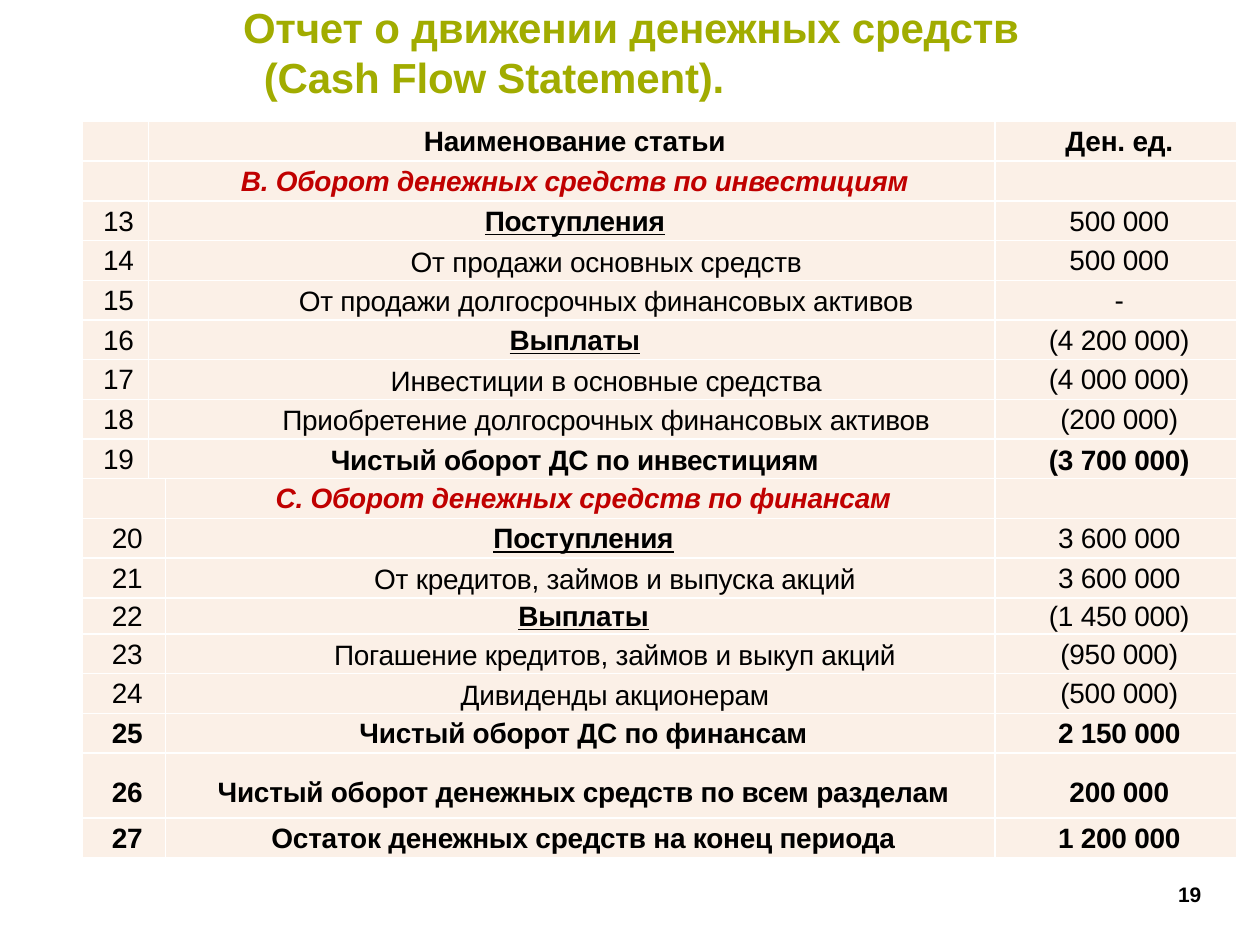
import pptx
import pptx.util
import pptx.dml.color
import pptx.enum.text
import pptx.oxml
import pptx.oxml.ns
from pptx.util import Cm, Pt

COLORS = {"title": "A1AC00", "text": "000000", "section": "C00000",
          "cell": "FBF0E7", "border": "FFFFFF"}
FONT = "Arial"

TITLE = "Отчет о движении денежных средств (Cash Flow Statement)."
PAGE_NUMBER = "19"

# Line number, item, amount, kind of line
INVESTING = [
    ("", "Наименование статьи", "Ден. ед.", "header"),
    ("", "B. Оборот денежных средств по инвестициям", "", "section"),
    ("13", "Поступления", "500 000", "group"),
    ("14", "От продажи основных средств", "500 000", "item"),
    ("15", "От продажи долгосрочных финансовых активов", "-", "item"),
    ("16", "Выплаты", "(4 200 000)", "group"),
    ("17", "Инвестиции в основные средства", "(4 000 000)", "item"),
    ("18", "Приобретение долгосрочных финансовых активов", "(200 000)", "item"),
    ("19", "Чистый оборот ДС по инвестициям", "(3 700 000)", "subtotal"),
]
FINANCING = [
    ("", "C. Оборот денежных средств по финансам", "", "section"),
    ("20", "Поступления", "3 600 000", "group"),
    ("21", "От кредитов, займов и выпуска акций", "3 600 000", "item"),
    ("22", "Выплаты", "(1 450 000)", "group"),
    ("23", "Погашение кредитов, займов и выкуп акций", "(950 000)", "item"),
    ("24", "Дивиденды акционерам", "(500 000)", "item"),
    ("25", "Чистый оборот ДС по финансам", "2 150 000", "total"),
    ("26", "Чистый оборот денежных средств по всем разделам", "200 000", "total"),
    ("27", "Остаток денежных средств на конец периода", "1 200 000", "total"),
]
LINES = INVESTING + FINANCING

COLUMN_WIDTHS = [1.33, 0.35, 16.72, 4.88]
ROW_HEIGHT = 0.8
SPECIAL_HEIGHTS = {"22": 0.73, "26": 1.31}
SPECIAL_INSETS = {"26": 0.3}


def set_font(paragraph, size, color, bold):
    font = paragraph.font
    font.name, font.size, font.bold = FONT, Pt(size), bold
    font.color.rgb = pptx.dml.color.RGBColor.from_string(COLORS[color])
    font._rPr.set("spc", "-10")
    return font


def set_indent(paragraph, left, first=0):
    properties = paragraph._p.get_or_add_pPr()
    properties.set("marL", str(Cm(left)))
    properties.set("indent", str(Cm(first)))


def add_text(slide, text, box, size, color, left, first=0):
    frame = slide.shapes.add_textbox(*map(Cm, box)).text_frame
    frame.margin_left = frame.margin_right = frame.margin_bottom = 0
    frame.margin_top = 0
    frame.word_wrap = True
    paragraph = frame.paragraphs[0]
    paragraph.text = text
    set_indent(paragraph, left, first)
    set_font(paragraph, size, color, True)


def style_cell(cell):
    for side in ("lnL", "lnR", "lnT", "lnB"):
        cell._tc.get_or_add_tcPr().append(pptx.oxml.parse_xml(
            f'<a:{side} {pptx.oxml.ns.nsdecls("a")} w="{Pt(1)}"><a:solidFill>'
            f'<a:srgbClr val="{COLORS["border"]}"/></a:solidFill></a:{side}>'))
    cell.fill.solid()
    cell.fill.fore_color.rgb = pptx.dml.color.RGBColor.from_string(COLORS["cell"])
    cell.margin_left = cell.margin_right = cell.margin_bottom = 0
    cell.margin_top = Cm(0.03)
    cell.vertical_anchor = pptx.enum.text.MSO_ANCHOR.MIDDLE


def fill_cell(cell, text, part, kind, number):
    is_item = kind == "item" and part == "name"
    paragraph = cell.text_frame.paragraphs[0]
    paragraph.text = text
    paragraph.alignment = pptx.enum.text.PP_ALIGN.CENTER
    set_indent(paragraph, 1.4 if is_item else 0.13)
    bold = (kind in ("header", "total")
            or kind == "subtotal" and part != "number"
            or kind in ("section", "group") and part == "name")
    font = set_font(paragraph, 16, "section" if kind == "section" else "text", bold)
    font.italic = kind == "section"
    font.underline = kind == "group" and part == "name"
    lowered = is_item or kind == "subtotal" and part != "number"
    cell.margin_top = Cm(SPECIAL_INSETS.get(number, 0.08 if lowered else 0.03))


deck = pptx.Presentation()
deck.slide_width, deck.slide_height = Cm(25.4), Cm(19.05)
slide = deck.slides.add_slide(deck.slide_layouts[6])

# Title, with a hanging second line
add_text(slide, TITLE, (4.85, 0.03, 15.88, 2.1), 24, "title", 0.47, -0.42)

# Cash flow table
heights = [SPECIAL_HEIGHTS.get(line[0], ROW_HEIGHT) for line in LINES]
statement = slide.shapes.add_table(
    len(LINES), len(COLUMN_WIDTHS), Cm(1.66), Cm(2.45),
    Cm(sum(COLUMN_WIDTHS)), Cm(sum(heights))).table
statement.first_row = statement.horz_banding = False
for column, width in zip(statement.columns, COLUMN_WIDTHS):
    column.width = Cm(width)

for row, (number, name, amount, kind) in enumerate(LINES):
    statement.rows[row].height = Cm(heights[row])
    cells = [statement.cell(row, column) for column in range(len(COLUMN_WIDTHS))]
    for cell in cells:
        style_cell(cell)
    # The narrow column joins the name above and the number below
    if row < len(INVESTING):
        cells[1].merge(cells[2])
        name_cell = cells[1]
    else:
        cells[0].merge(cells[1])
        name_cell = cells[2]
    fill_cell(cells[0], number, "number", kind, number)
    fill_cell(name_cell, name, "name", kind, number)
    fill_cell(cells[3], amount, "amount", kind, number)

# Page number
add_text(slide, PAGE_NUMBER, (23.67, 17.78, 0.61, 0.51), 12, "text", 0.08)

deck.save("out.pptx")
